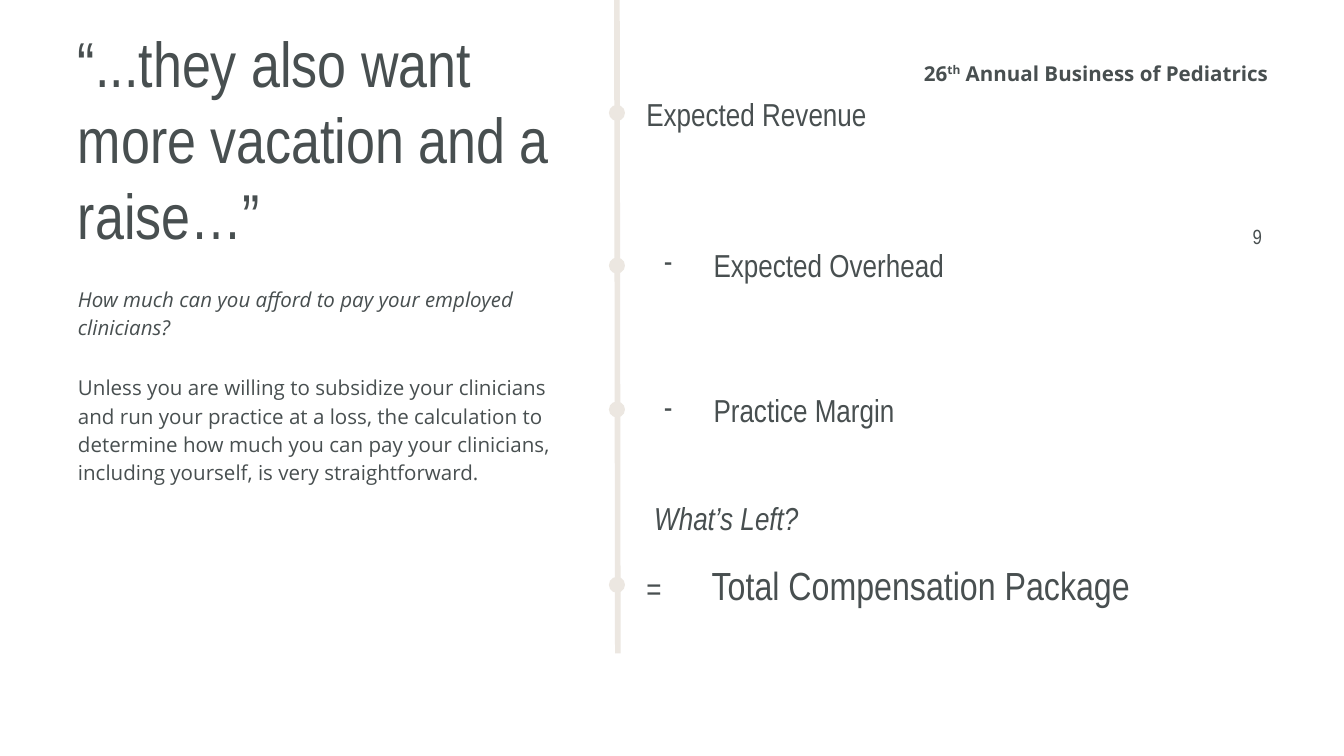
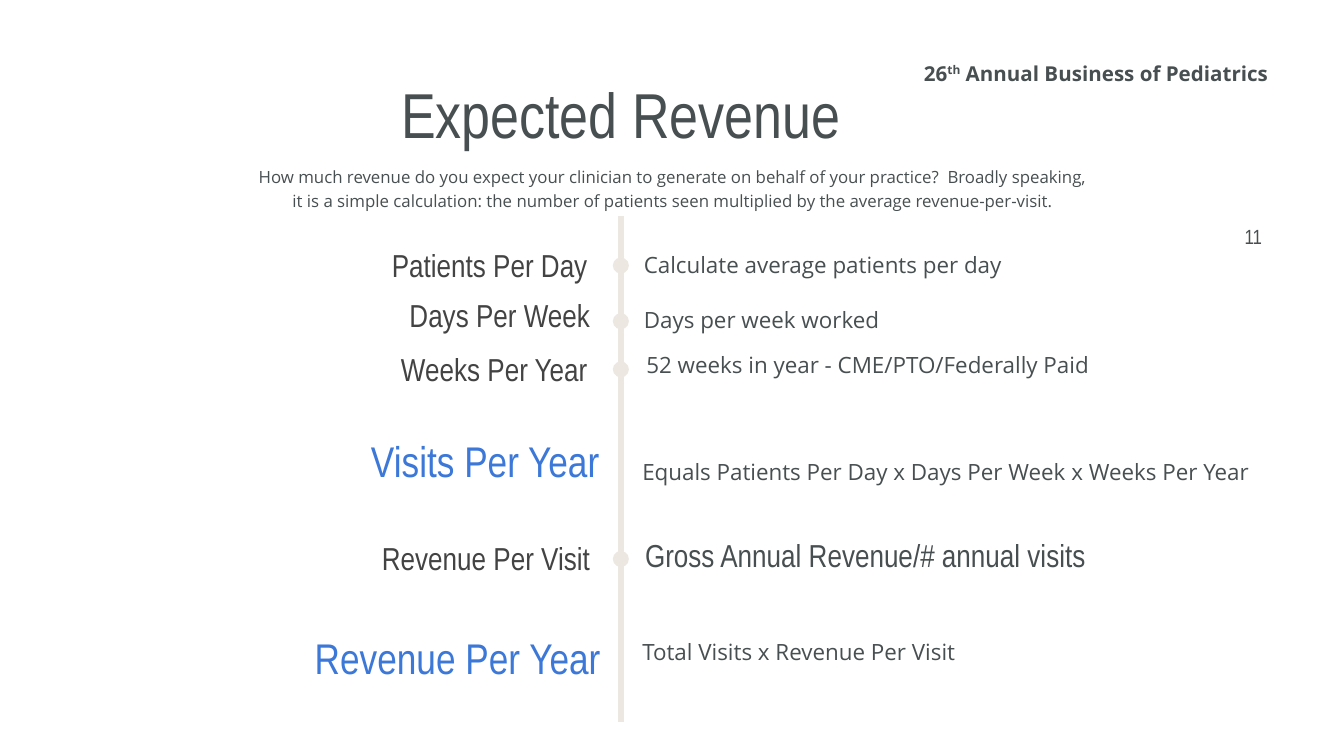
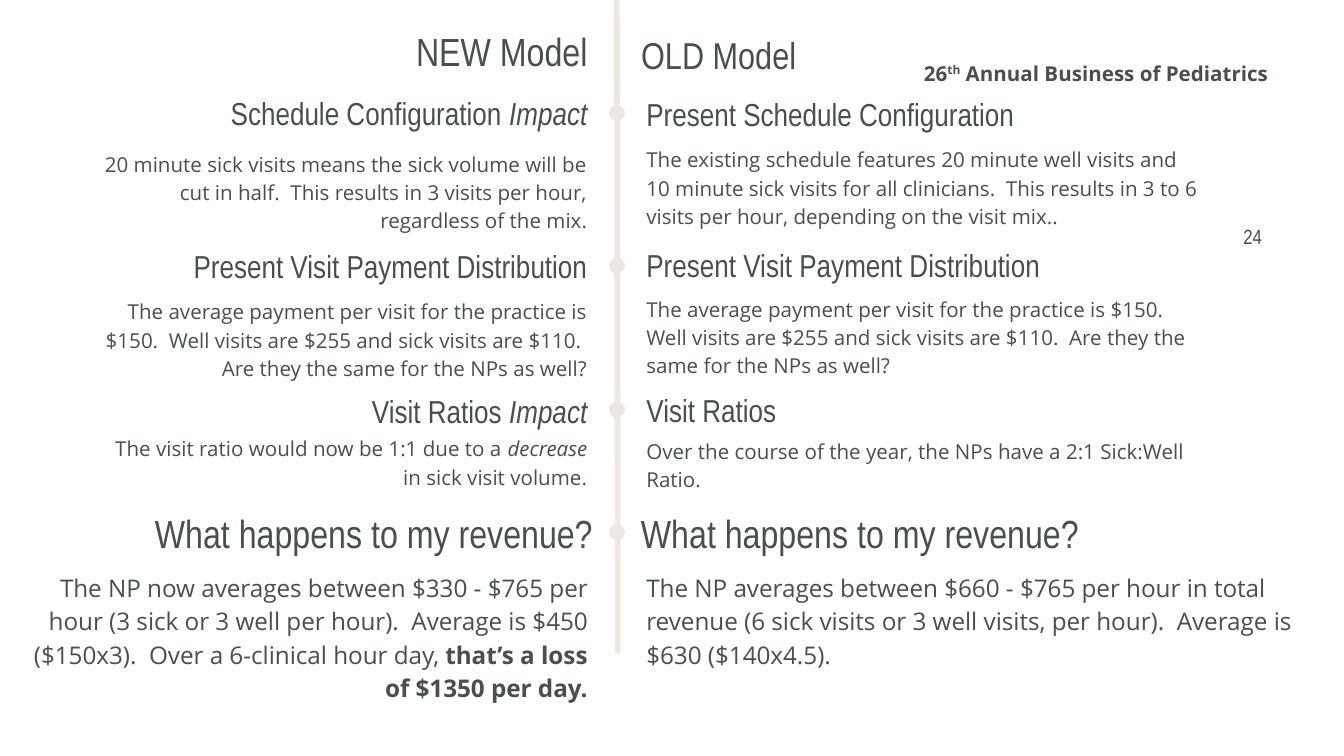
from dataclasses import dataclass
from typing import NamedTuple

from lxml import etree
from pptx import Presentation
from pptx.dml.color import RGBColor
from pptx.enum.shapes import MSO_CONNECTOR, MSO_SHAPE
from pptx.enum.text import MSO_ANCHOR, MSO_AUTO_SIZE, PP_ALIGN
from pptx.oxml.ns import qn
from pptx.util import Pt

LEFT, MID, RIGHT = PP_ALIGN.LEFT, PP_ALIGN.CENTER, PP_ALIGN.RIGHT
TOP, CENTRE, BASE = MSO_ANCHOR.TOP, MSO_ANCHOR.MIDDLE, MSO_ANCHOR.BOTTOM
OVAL, LINE, FIXED = MSO_SHAPE.OVAL, MSO_CONNECTOR.STRAIGHT, MSO_AUTO_SIZE.NONE
TIGHT, WIDE = (2.88, 1.44), (7.2, 7.2)
TITLE_ONLY = 5


class Style(NamedTuple):
    """Look of one kind of text."""
    font: str
    size: float
    color: str
    anchor: int = TOP
    space: float = 1.0
    pad: tuple = TIGHT
    bold: bool = False


class Box(NamedTuple):
    """Rectangle in points."""
    x: float
    y: float
    w: float
    h: float

    def sub(self, dx, dy, w, h):
        """Return a box placed relative to this one."""
        return Box(self.x + dx, self.y + dy, w, h)


@dataclass(frozen=True)
class Theme:
    """Colours, type sizes and text styles of the deck."""
    ink: str = "484F50"
    gray: str = "434343"
    blue: str = "3C78D8"
    sand: str = "ECE7E1"
    stroke: float = 3
    dot: float = 8.6
    title: Style = Style("Arial Narrow", 34, ink)
    head: Style = Style("Arial Narrow", 17, ink, CENTRE)
    big: Style = Style("Arial Narrow", 21, ink, CENTRE)
    old: Style = Style("Arial Narrow", 20, ink, CENTRE)
    aside: Style = Style("Arial Narrow", 17, ink, pad=WIDE)
    label: Style = Style("Arial Narrow", 17, gray, pad=WIDE)
    sum: Style = Style("Arial Narrow", 23, blue, pad=WIDE)
    page: Style = Style("Arial Narrow", 11, ink)
    event: Style = Style("Open Sans", 11, ink, bold=True)
    body: Style = Style("Open Sans", 11, ink, space=1.15)
    low: Style = Style("Open Sans", 11, ink, BASE, 1.15)
    intro: Style = Style("Open Sans", 9, ink, space=1.15)
    lead: Style = Style("Open Sans", 13, ink, space=1.15)
    note: Style = Style("Open Sans", 12, ink, CENTRE)
    loose: Style = Style("Open Sans", 12, ink, CENTRE, 1.15)
    result: Style = Style("Open Sans", 12, ink, space=1.15, pad=WIDE)


LOOK = Theme()


def shade(text):
    """Turn a hex code into a colour."""
    return RGBColor.from_string(text)


def fill_para(para, parts, style, align):
    """Write runs, each a string or a (text, mark) pair, into a paragraph."""
    para.alignment, para.line_spacing = align, style.space
    para.space_before = para.space_after = Pt(0)
    for part in parts:
        words, mark = (part, "") if isinstance(part, str) else part
        run = para.add_run()
        run.text = words
        font = run.font
        font.name, font.size = style.font, Pt(style.size)
        font.color.rgb = shade(style.color)
        font.bold = style.bold or mark == "bold"
        font.italic = mark == "slant"
        if mark == "super":
            run._r.get_or_add_rPr().set("baseline", "33000")


def write(slide, box, style, *paras, align=LEFT, title=False):
    """Place text in a new box or in the title placeholder."""
    sides = [Pt(side) for side in box]
    if title:
        shape = slide.shapes.title
        shape.left, shape.top, shape.width, shape.height = sides
    else:
        shape = slide.shapes.add_textbox(*sides)
    frame = shape.text_frame
    frame.word_wrap, frame.auto_size = True, FIXED
    frame.vertical_anchor = style.anchor
    frame.margin_left = frame.margin_right = Pt(style.pad[0])
    frame.margin_top = frame.margin_bottom = Pt(style.pad[1])
    for index, parts in enumerate(paras):
        para = frame.add_paragraph() if index else frame.paragraphs[0]
        fill_para(para, [parts] if isinstance(parts, str) else parts, style, align)
    return frame


def hang(para, left, back, sign=None):
    """Give a paragraph a hanging indent and, if named, a bullet."""
    props = para._p.get_or_add_pPr()
    props.set("marL", str(Pt(left)))
    props.set("indent", str(-Pt(back)))
    if sign:
        color = etree.SubElement(props, qn("a:buClr"))
        etree.SubElement(color, qn("a:srgbClr"), val=LOOK.ink)
        etree.SubElement(props, qn("a:buFont"), typeface=LOOK.head.font)
        etree.SubElement(props, qn("a:buChar"), char=sign)


def spine(slide, box, dots):
    """Draw the upright line and its dots, given by their centres."""
    line = slide.shapes.add_connector(
        LINE, Pt(box.x), Pt(box.y), Pt(box.x + box.w), Pt(box.y + box.h))
    line.line.color.rgb, line.line.width = shade(LOOK.sand), Pt(LOOK.stroke)
    etree.SubElement(line._element.spPr, qn("a:effectLst"))
    size = LOOK.dot
    for y in dots:
        dot = slide.shapes.add_shape(
            OVAL, Pt(box.x - size / 2), Pt(box.y + y - size / 2), Pt(size), Pt(size))
        dot.shadow.inherit = False
        dot.fill.solid()
        dot.fill.fore_color.rgb = shade(LOOK.sand)
        dot.line.fill.background()


def start(deck, number):
    """Add a slide with the event name and page number."""
    slide = deck.slides.add_slide(deck.slide_layouts[TITLE_ONLY])
    write(slide, Box(651.6, 118.8, 27.4, 18.7), LOOK.page, number, align=RIGHT)
    write(slide, Box(486, 31, 196.5, 15.8), LOOK.event,
          ["26", ("th", "super"), " Annual Business of Pediatrics"], align=RIGHT)
    return slide


def quote(slide, box):
    """Place the quoted title and the text below it."""
    write(slide, box.sub(0, 0, 268.6, 125.3), LOOK.title,
          "“...they also want more vacation and a raise…”", title=True)
    frame = write(
        slide, box.sub(0, 141.1, 259.2, 108.7), LOOK.low,
        [("How much can you afford to pay your employed clinicians?", "slant")],
        "Unless you are willing to subsidize your clinicians and run your practice "
        "at a loss, the calculation to determine how much you can pay your "
        "clinicians, including yourself, is very straightforward.")
    frame.paragraphs[1].space_before = Pt(17.2)


def steps(slide, box):
    """Place the subtraction from revenue to pay."""
    rows = [("Expected Revenue", 0, None), ("Expected Overhead", 80.6, "-"),
            ("Practice Margin", 158.4, "-")]
    for words, y, sign in rows:
        frame = write(slide, box.sub(0, y, 213.8, 23), LOOK.head, words)
        if sign:
            hang(frame.paragraphs[0], 36, 26.6, sign)
    write(slide, box.sub(0, 210.2, 236.2, 34.6), LOOK.aside,
          [("What’s Left?", "slant")])
    frame = write(slide, box.sub(0, 249.8, 362.9, 28.1), LOOK.big,
                  ["=", "\tTotal Compensation Package"])
    para = frame.paragraphs[0]
    hang(para, 35, 35)
    para.runs[0].font.size = Pt(LOOK.head.size)


def opening(slide, box):
    """Place the revenue title and its introduction."""
    write(slide, box.sub(33.1, 0, 332.6, 43.2), LOOK.title, "Expected Revenue",
          align=MID, title=True)
    write(slide, box.sub(0, 47.5, 453.6, 27.4), LOOK.intro,
          "How much revenue do you expect your clinician to generate on behalf of "
          "your practice?  Broadly speaking, it is a simple calculation: the number "
          "of patients seen multiplied by the average revenue-per-visit.", align=MID)


def factors(slide, box):
    """Place the labels left of the spine."""
    rows = [("Patients Per Day", LOOK.label, 0, 0),
            ("Days Per Week", LOOK.label, 1.4, 26.6),
            ("Weeks Per Year", LOOK.label, 0, 55.4),
            ("Visits Per Year", LOOK.sum, 6.5, 100.8),
            ("Revenue Per Visit", LOOK.label, 1.4, 156.9),
            ("Revenue Per Year", LOOK.sum, 7.2, 206.6)]
    for words, style, x, y in rows:
        high = 41.8 if style is LOOK.sum else 34.6
        write(slide, box.sub(x, y, box.w, high), style, words, align=RIGHT)


def details(slide, box):
    """Place the explanations right of the spine."""
    rows = [("Calculate average patients per day", LOOK.note, 5, 0, 294.5, 17.3),
            ("Days per week worked", LOOK.loose, 5, 27.4, 294.5, 19.4),
            ("52 weeks in year - CME/PTO/Federally Paid", LOOK.note,
             6.4, 53.3, 357.8, 17.3),
            ("Equals Patients Per Day x Days Per Week x Weeks Per Year",
             LOOK.result, 0, 103, 350.6, 31),
            ("Gross Annual Revenue/# annual visits", LOOK.head,
             5.7, 152.6, 362.9, 23),
            ("Total Visits x Revenue Per Visit", LOOK.result, 0, 199.4, 350.6, 31)]
    for words, style, *place in rows:
        write(slide, box.sub(*place), style, words)


def column(slide, box, align, rows):
    """Stack rows of (style, text, top, width, height) along the spine side."""
    for style, words, y, wide, high in rows:
        push = 2.9 if style is LOOK.big else 0
        x = box.w - wide + push if align == RIGHT else -push
        write(slide, box.sub(x, y, wide, high), style, words, align=align)


def raise_slide(deck):
    """Build the slide on what is left for pay."""
    slide = start(deck, "9")
    spine(slide, Box(330.5, 0, 0.5, 350), [60.5, 142.3, 219.4, 313.3])
    quote(slide, Box(38.9, 11.5, 268.6, 250))
    steps(slide, Box(343.4, 49.7, 362.9, 278))


def revenue_slide(deck):
    """Build the slide on expected revenue."""
    slide = start(deck, "11")
    spine(slide, Box(332.6, 115.9, 0, 270.7), [26.4, 56.2, 82, 183.6])
    opening(slide, Box(133.2, 38.9, 453.6, 75))
    factors(slide, Box(31.7, 124.6, 290.2, 250))
    details(slide, Box(337, 133.2, 362.9, 231))


def model_slide(deck):
    """Build the slide that compares both models."""
    ask = "What happens to my revenue?"
    split = "Present Visit Payment Distribution"
    mean = ("The average payment per visit for the practice is $150.  Well visits "
            "are $255 and sick visits are $110.  Are they the same for the NPs as well?")
    new = [
        (LOOK.head, ["Schedule Configuration ", ("Impact", "slant")], 49, 268.6, 23),
        (LOOK.body, "20 minute sick visits means the sick volume will be cut in half.  "
         "This results in 3 visits per hour, regardless of the mix.",
         77.8, 280.1, 48.2),
        (LOOK.head, split, 131, 311.8, 23),
        (LOOK.body, mean, 157, 268.6, 48.2),
        (LOOK.head, ["Visit Ratios ", ("Impact", "slant")], 208.8, 213.8, 23),
        (LOOK.body, ["The visit ratio would now be 1:1 due to a ",
                     ("decrease ", "slant"), "in sick visit volume."],
         230.4, 268.6, 33.1),
        (LOOK.big, ask, 271.4, 362.9, 28.1),
        (LOOK.lead, ["The NP now averages between $330 - $765 per hour (3 sick or 3 "
                     "well per hour).  Average is $450 ($150x3).  Over a 6-clinical "
                     "hour day, ", ("that’s a loss of $1350 per day.", "bold")],
         303.1, 308.2, 74.2)]
    old = [
        (LOOK.old, "OLD Model", 15.8, 268.6, 26.6),
        (LOOK.head, "Present Schedule Configuration", 49.7, 268.6, 23),
        (LOOK.body, "The existing schedule features 20 minute well visits and 10 "
         "minute sick visits for all clinicians.  This results in 3 to 6 visits per "
         "hour, depending on the visit mix..", 75.6, 304.6, 48.2),
        (LOOK.head, split, 130.3, 311.8, 23),
        (LOOK.body, mean, 155.5, 299.5, 48.2),
        (LOOK.head, "Visit Ratios", 208.1, 213.8, 23),
        (LOOK.body, "Over the course of the year, the NPs have a 2:1 Sick:Well Ratio.",
         231.8, 299.5, 33.1),
        (LOOK.big, ask, 271.4, 362.9, 28.1),
        (LOOK.lead, "The NP averages between $660 - $765 per hour in total revenue (6 "
         "sick visits or 3 well visits, per hour).  Average is $630 ($140x4.5).",
         303.1, 357.8, 56.2)]
    slide = start(deck, "24")
    spine(slide, Box(330.5, 0, 0.5, 350), [60.5, 142.3, 219.4, 285.1])
    write(slide, Box(49, 13, 268.6, 28.1), LOOK.big, "NEW Model",
          align=RIGHT, title=True)
    column(slide, Box(0, 0, 317.6, 405), RIGHT, new)
    column(slide, Box(340.6, 0, 362.9, 405), LEFT, old[:1])
    column(slide, Box(343.4, 0, 362.9, 405), LEFT, old[1:])


def main():
    """Build and save the deck."""
    deck = Presentation()
    deck.slide_width, deck.slide_height = Pt(720), Pt(405)
    raise_slide(deck)
    revenue_slide(deck)
    model_slide(deck)
    deck.save("out.pptx")


if __name__ == "__main__":
    main()
